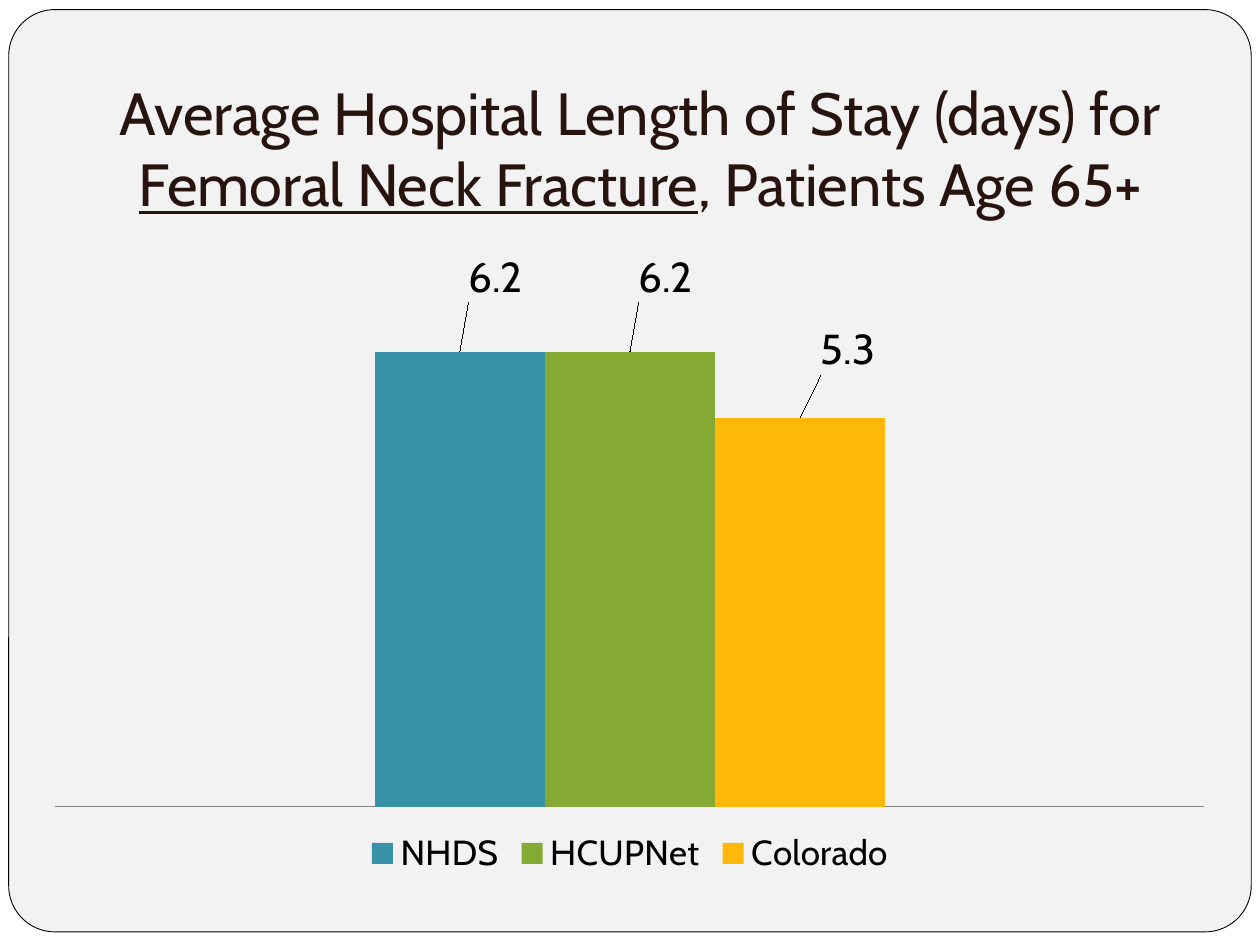
"""Slide with a column chart of hospital length of stay."""
from lxml.etree import SubElement
from pptx import Presentation
from pptx.chart.data import CategoryChartData
from pptx.dml.color import RGBColor
from pptx.enum.chart import (XL_CHART_TYPE, XL_LABEL_POSITION as POS, XL_LEGEND_POSITION,
                             XL_TICK_LABEL_POSITION as TICK_LABEL, XL_TICK_MARK as TICK)
from pptx.enum.shapes import MSO_SHAPE as SHAPE
from pptx.enum.text import MSO_ANCHOR, PP_ALIGN
from pptx.oxml.ns import qn
from pptx.util import Pt

FONT = "Cabin"
WHITE = RGBColor(0xFF, 0xFF, 0xFF)
PANEL = RGBColor(0xF2, 0xF2, 0xF2)
BLACK = RGBColor(0, 0, 0)
BROWN = RGBColor(0x28, 0x14, 0x0E)
GREY = RGBColor(0x86, 0x86, 0x86)
TEAL = RGBColor(0x38, 0x91, 0xA7)
GREEN = RGBColor(0x84, 0xAA, 0x33)
AMBER = RGBColor(0xFE, 0xB8, 0x0A)

TITLE = [("Average Hospital Length of Stay (days) for ", False),
         ("Femoral Neck Fracture", True),
         (", Patients Age 65+", False)]
SERIES = [("NHDS", 6.2, TEAL, (0.03, -0.07)),
          ("HCUPNet", 6.2, GREEN, (0.03, -0.07)),
          ("Colorado", 5.3, AMBER, (0.04, -0.06))]
PLOT = {"layoutTarget": "inner", "xMode": "edge", "yMode": "edge",
        "x": 0.02, "y": 0.06, "w": 0.96, "h": 0.82}


def set_font(font, size, color=BLACK):
    font.name, font.size = FONT, Pt(size)
    font.color.rgb = color


def add_text(p, text, size=34, color=BROWN, underline=False):
    r = p.add_run()
    r.text = text
    set_font(r.font, size, color)
    r.font.underline = underline


def add_panel(s, kind, box, fill, line=None):
    sp = s.shapes.add_shape(kind, *map(Pt, box))
    sp.shadow.inherit = False
    sp.fill.solid()
    sp.fill.fore_color.rgb = fill
    if line is None:
        sp.line.fill.background()
    else:
        sp.line.color.rgb, sp.line.width = line, Pt(0.5)
    return sp


def set_layout(parent, index, values):
    for old in parent.findall(qn("c:layout")):
        parent.remove(old)
    layout = SubElement(parent, qn("c:layout"))
    manual = SubElement(layout, qn("c:manualLayout"))
    for name, value in values.items():
        SubElement(manual, qn("c:" + name)).set("val", str(value))
    parent.insert(index, layout)


def add_title(s):
    tf = s.shapes.add_textbox(Pt(30), Pt(36), Pt(672), Pt(96)).text_frame
    tf.word_wrap, tf.vertical_anchor = True, MSO_ANCHOR.BOTTOM
    tf.margin_bottom = Pt(7.2)
    p = tf.paragraphs[0]
    p.alignment = PP_ALIGN.CENTER
    for text, underline in TITLE:
        add_text(p, text, underline=underline)


def add_stay_chart(s):
    data = CategoryChartData()
    data.categories = ["1"]
    for name, value, *_ in SERIES:
        data.add_series(name, [value])
    chart = s.shapes.add_chart(XL_CHART_TYPE.COLUMN_CLUSTERED,
                               Pt(18), Pt(144), Pt(684), Pt(360), data).chart
    set_font(chart.font, 18)
    chart.has_title = False
    chart.has_legend = True
    chart.legend.position = XL_LEGEND_POSITION.BOTTOM
    chart.legend.include_in_layout = False
    set_font(chart.legend.font, 20)
    for axis in (chart.category_axis, chart.value_axis):
        axis.has_major_gridlines = False
        axis.major_tick_mark = axis.minor_tick_mark = TICK.NONE
        axis.tick_label_position = TICK_LABEL.NONE
    chart.category_axis.format.line.color.rgb = GREY
    chart.value_axis.format.line.fill.background()
    chart.value_axis.minimum_scale, chart.value_axis.maximum_scale = 0, 7
    plot = chart.plots[0]
    plot.gap_width, plot.overlap, plot.vary_by_categories = 375, 0, False
    for series, (_, _, color, (dx, dy)) in zip(plot.series, SERIES):
        series.format.fill.solid()
        series.format.fill.fore_color.rgb = color
        labels = series.data_labels
        labels.show_value, labels.position = True, POS.OUTSIDE_END
        set_font(labels.font, 24)
        label = series.points[0].data_label
        label.position = POS.OUTSIDE_END
        set_font(label.font, 24)
        set_layout(next(series._element.iter(qn("c:dLbl"))), 1, {"x": dx, "y": dy})
    set_layout(next(chart._chartSpace.iter(qn("c:plotArea"))), 0, PLOT)


def main():
    prs = Presentation()
    prs.slide_width, prs.slide_height = Pt(720), Pt(540)
    s = prs.slides.add_slide(prs.slide_layouts[6])
    add_panel(s, SHAPE.RECTANGLE, (0, 0, 720, 540), WHITE)
    card = add_panel(s, SHAPE.ROUNDED_RECTANGLE, (5, 5.5, 710, 527), PANEL, BLACK)
    card.adjustments[0] = 0.05
    add_stay_chart(s)
    add_title(s)
    prs.save("out.pptx")


if __name__ == "__main__":
    main()
